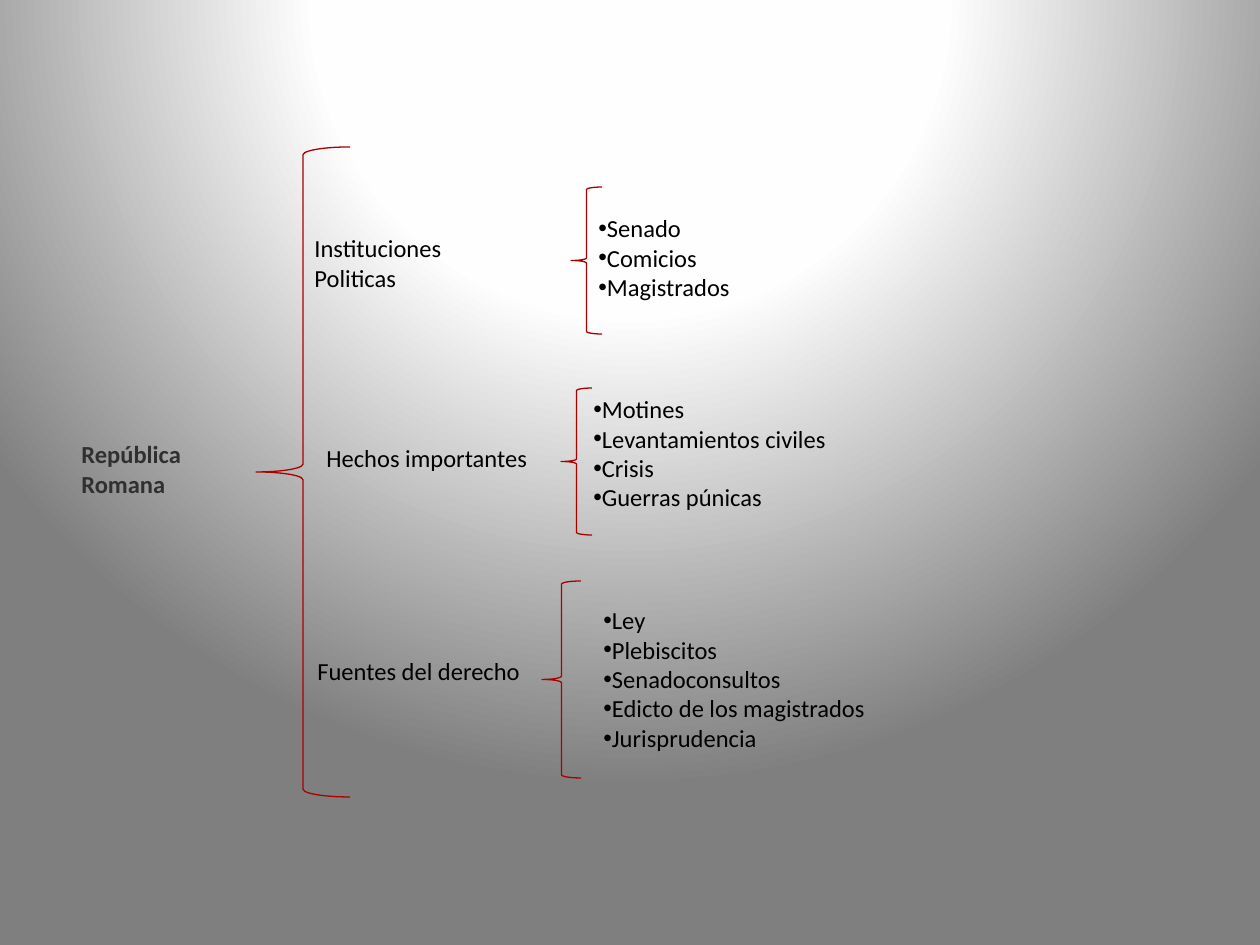
from dataclasses import dataclass

from lxml import etree
from pptx import Presentation
from pptx.dml.color import RGBColor
from pptx.enum.shapes import MSO_SHAPE
from pptx.enum.text import MSO_AUTO_SIZE
from pptx.oxml import parse_xml
from pptx.oxml.ns import nsdecls, qn
from pptx.slide import Slide
from pptx.util import Emu, Pt

LEFT_BRACE = MSO_SHAPE.LEFT_BRACE
GROW_TO_FIT = MSO_AUTO_SIZE.SHAPE_TO_FIT_TEXT
EMU_PER_PX = 914400 / 126
BLANK_LAYOUT = 6
FONT = "Calibri"
FONT_SIZE = Pt(14)
COLORS = {
    "text": "000000",
    "topic": "303030",
    "brace": "AA0000",
    "glow": "FFFFFF",
    "glow_edge": "FEFEFE",
    "shade": "7F7F7F",
}
BACKGROUND_STOPS = [(0, "glow"), (40, "glow_edge"), (100, "shade")]


@dataclass(frozen=True)
class Box:
    left: int
    top: int
    width: int
    height: int

    def emu(self) -> list[Emu]:
        return [px(n) for n in (self.left, self.top, self.width, self.height)]


@dataclass(frozen=True)
class Branch:
    label: list[str]
    label_box: Box
    brace_box: Box
    items: list[str]
    items_box: Box


TOPIC = ["República", "Romana"]
TOPIC_BOX = Box(69, 433, 266, 72)
TOPIC_BRACE = Box(256, 147, 94, 650)
BRANCHES = [
    Branch(
        ["Instituciones", "Politicas"], Box(302, 227, 258, 72),
        Box(571, 187, 31, 147),
        ["Senado", "Comicios", "Magistrados"], Box(586, 207, 360, 102),
    ),
    Branch(
        ["Hechos importantes"], Box(314, 437, 272, 43),
        Box(561, 388, 31, 147),
        ["Motines", "Levantamientos civiles", "Crisis", "Guerras púnicas"],
        Box(581, 388, 438, 131),
    ),
    Branch(
        ["Fuentes del derecho"], Box(305, 650, 243, 43),
        Box(542, 581, 39, 197),
        ["Ley", "Plebiscitos", "Senadoconsultos", "Edicto de los magistrados",
         "Jurisprudencia"],
        Box(591, 599, 470, 161),
    ),
]


def px(length: int) -> Emu:
    return Emu(round(length * EMU_PER_PX))


def set_radial_background(slide: Slide) -> None:
    """Light glow centred above the slide, darkening outwards."""
    stops = "".join(
        f'<a:gs pos="{percent * 1000}"><a:srgbClr val="{COLORS[color]}"/></a:gs>'
        for percent, color in BACKGROUND_STOPS
    )
    background = parse_xml(
        f'<p:bg {nsdecls("p", "a")}><p:bgPr><a:gradFill rotWithShape="1">'
        f"<a:gsLst>{stops}</a:gsLst>"
        '<a:path path="circle">'
        '<a:fillToRect l="50000" t="-80000" r="50000" b="180000"/></a:path>'
        "</a:gradFill><a:effectLst/></p:bgPr></p:bg>"
    )
    slide.element.cSld.insert(0, background)


def add_text(slide: Slide, box: Box, lines: list[str], color: str = "text",
             bold: bool = False, bulleted: bool = False) -> None:
    frame = slide.shapes.add_textbox(*box.emu()).text_frame
    frame.word_wrap = True
    frame.auto_size = GROW_TO_FIT
    for index, line in enumerate(lines):
        paragraph = frame.add_paragraph() if index else frame.paragraphs[0]
        if bulleted:
            properties = paragraph._p.get_or_add_pPr()
            etree.SubElement(properties, qn("a:buFont"), typeface="Arial")
            etree.SubElement(properties, qn("a:buChar"), char="•")
        run = paragraph.add_run()
        run.text = line
        run.font.name = FONT
        run.font.size = FONT_SIZE
        run.font.bold = bold
        run.font.color.rgb = RGBColor.from_string(COLORS[color])


def add_brace(slide: Slide, box: Box) -> None:
    brace = slide.shapes.add_shape(LEFT_BRACE, *box.emu())
    brace.shadow.inherit = False
    brace.fill.background()
    brace.line.color.rgb = RGBColor.from_string(COLORS["brace"])
    brace.line.width = Pt(0.75)


def main() -> None:
    presentation = Presentation()
    presentation.slide_width = px(1260)
    presentation.slide_height = px(945)
    slide = presentation.slides.add_slide(
        presentation.slide_layouts[BLANK_LAYOUT])
    set_radial_background(slide)

    add_text(slide, TOPIC_BOX, TOPIC, color="topic", bold=True)
    add_brace(slide, TOPIC_BRACE)
    for branch in BRANCHES:
        add_text(slide, branch.label_box, branch.label)
        add_brace(slide, branch.brace_box)
        add_text(slide, branch.items_box, branch.items, bulleted=True)

    presentation.save("out.pptx")


if __name__ == "__main__":
    main()
